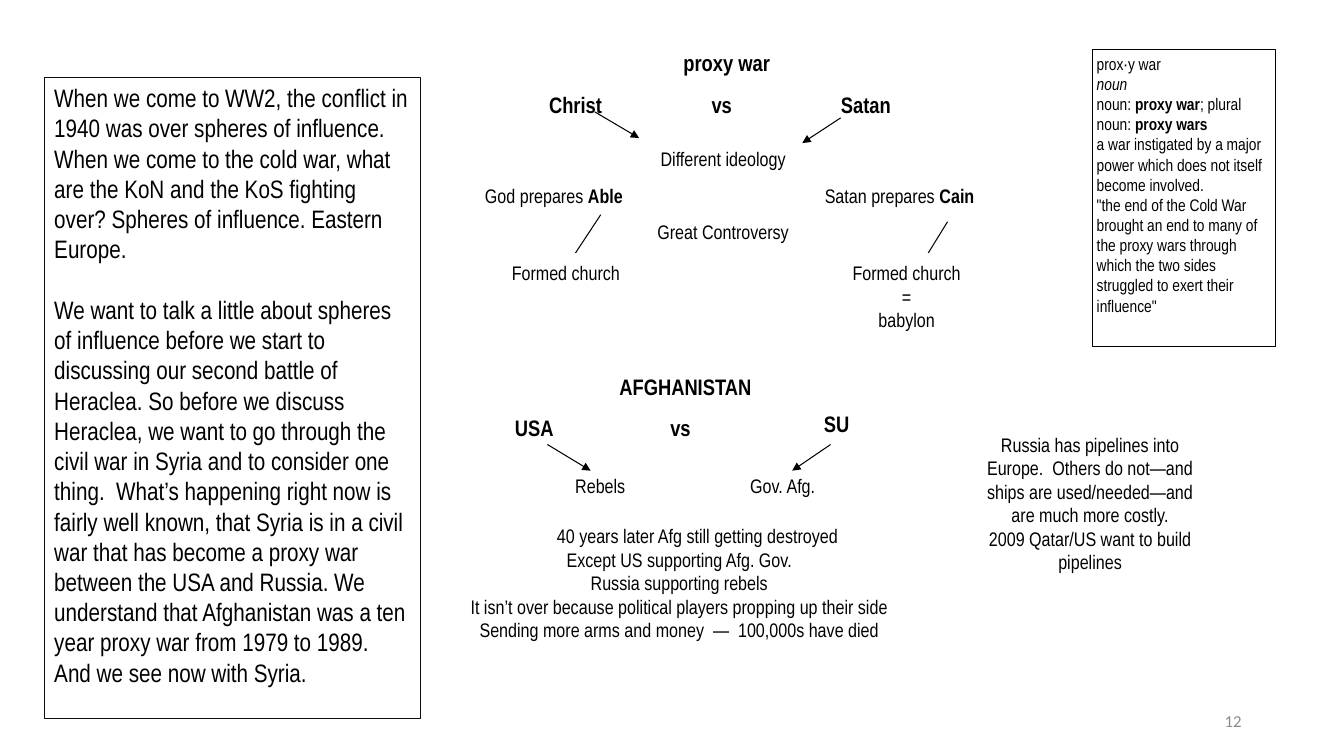
from dataclasses import dataclass

from lxml import etree
from pptx import Presentation
from pptx.dml.color import RGBColor
from pptx.enum.shapes import MSO_CONNECTOR, MSO_SHAPE
from pptx.enum.text import MSO_ANCHOR, MSO_AUTO_SIZE, PP_ALIGN
from pptx.oxml.ns import qn
from pptx.util import Pt

LEFT, CENTER, RIGHT = PP_ALIGN.LEFT, PP_ALIGN.CENTER, PP_ALIGN.RIGHT
TOP, MIDDLE = MSO_ANCHOR.TOP, MSO_ANCHOR.MIDDLE
NO_AUTOFIT = MSO_AUTO_SIZE.NONE
RECT, STRAIGHT = MSO_SHAPE.RECTANGLE, MSO_CONNECTOR.STRAIGHT


@dataclass(frozen=True)
class Theme:
    font: str = "Arial Narrow"
    number_font: str = "Calibri"
    ink: RGBColor = RGBColor(0, 0, 0)
    frame: RGBColor = RGBColor(0x0D, 0x0D, 0x0D)
    grey: RGBColor = RGBColor(0x8C, 0x8C, 0x8C)
    body: int = 18
    heading: int = 16
    label: int = 14
    small: int = 12
    inset: float = 2.88
    line: float = 0.75


T = Theme()
HEADING_W, LABEL_W, VS_W, ROW_H = 135.4, 130.3, 21.6, 26


def write(sp, paragraphs, size, align=CENTER, bold=None, inset=T.inset,
          anchor=TOP, font=T.font, color=T.ink):
    """Fill a shape; a paragraph is a string or a list of (text, style) runs."""
    tf = sp.text_frame
    tf.word_wrap = True
    tf.auto_size = NO_AUTOFIT
    tf.vertical_anchor = anchor
    tf.margin_left = tf.margin_right = Pt(inset)
    tf.margin_top = tf.margin_bottom = Pt(min(inset, 3.6))
    for i, runs in enumerate(paragraphs):
        p = tf.add_paragraph() if i else tf.paragraphs[0]
        p.alignment = align
        p.font.name, p.font.size, p.font.bold = font, Pt(size), bold
        p.font.color.rgb = color
        for text, style in [(runs, "")] if isinstance(runs, str) else runs:
            r = p.add_run()
            r.text = text
            if style == "b":
                r.font.bold = True
            elif style == "i":
                r.font.italic = True
    return tf


def add_text(slide, x, y, w, h, paragraphs, size, **style):
    sp = slide.shapes.add_textbox(Pt(x), Pt(y), Pt(w), Pt(h))
    return write(sp, paragraphs, size, **style)


def add_frame(slide, box, color, width):
    sp = slide.shapes.add_shape(RECT, *map(Pt, box))
    sp.shadow.inherit = False
    sp.fill.background()
    sp.line.color.rgb = color
    sp.line.width = Pt(width)
    return sp


def add_line(slide, x1, y1, x2, y2, arrow):
    s = slide.shapes.add_connector(STRAIGHT, Pt(x1), Pt(y1), Pt(x2), Pt(y2))
    s.line.color.rgb = T.ink
    s.line.width = Pt(T.line)
    if arrow:
        etree.SubElement(s.line._get_or_add_ln(), qn("a:tailEnd"), type="triangle")
    etree.SubElement(s._element.spPr, qn("a:effectLst"))


def add_diagram(slide, x, y, headings, labels, lines):
    """Place headings, labels and lines relative to the diagram's corner."""
    for dx, dy, text in headings:
        vs = text == "vs"
        add_text(slide, x + dx, y + dy, VS_W if vs else HEADING_W, ROW_H, [text],
                 T.heading, bold=True, align=LEFT if vs else CENTER)
    for dx, dy, paragraphs in labels:
        add_text(slide, x + dx, y + dy, LABEL_W, ROW_H + 17 * (len(paragraphs) - 1),
                 paragraphs, T.label)
    for x1, y1, x2, y2, arrow in lines:
        add_line(slide, x + x1, y + y1, x + x2, y + y2, arrow)


def spheres_panel(slide, box):
    sp = add_frame(slide, box, T.frame, T.line)
    tf = write(sp, [
        "When we come to WW2, the conflict in 1940 was over spheres of influence.  "
        "When we come to the cold war, what are the KoN and the KoS fighting over? "
        "Spheres of influence. Eastern Europe.",
        "We want to talk a little about spheres of influence before we start to "
        "discussing our second battle of Heraclea. So before we discuss Heraclea, "
        "we want to go through the civil war in Syria and to consider one thing.  "
        "What’s happening right now is fairly well known, that Syria is in a civil war "
        "that has become a proxy war between the USA and Russia. We understand that "
        "Afghanistan was a ten year proxy war from 1979 to 1989.  "
        "And we see now with Syria.",
    ], T.body, align=LEFT, inset=7.2)
    tf.paragraphs[0].space_after = Pt(21.6)


def proxy_war_diagram(slide, x, y):
    title = slide.shapes.title
    title.left, title.top = Pt(x + 121.4), Pt(y)
    title.width, title.height = Pt(HEADING_W), Pt(ROW_H)
    write(title, ["proxy war"], T.heading, bold=True)
    add_diagram(
        slide, x, y,
        headings=[(13.4, 29.5, "Christ"), (175.4, 29.5, "vs"), (220.8, 29.5, "Satan")],
        labels=[
            (121.4, 69.8, ["Different ideology"]),
            (0.5, 95.8, [[("God prepares ", ""), ("Able", "b")]]),
            (247.4, 95.8, [[("Satan prepares ", ""), ("Cain", "b")]]),
            (121.4, 121.7, ["Great Controversy"]),
            (9.1, 151.2, ["Formed church"]),
            (252.5, 151.2, ["Formed church", "=", "babylon"]),
        ],
        lines=[
            (94.8, 47.5, 126.5, 66.2, True), (270.5, 51.8, 243.1, 69.8, True),
            (99.1, 121, 81.1, 148.3, False), (346.8, 126, 333.1, 148.3, False),
        ])


def afghanistan_diagram(slide, x, y):
    add_diagram(
        slide, x, y,
        headings=[(116.9, 0, "AFGHANISTAN"), (8.9, 29.5, "USA"),
                  (170.9, 29.5, "vs"), (224.9, 26.7, "SU")],
        labels=[(58.6, 72, ["Rebels"]), (188.9, 72, ["Gov. Afg."])],
        lines=[(86, 54, 116.9, 72.7, True), (288.3, 54, 260.9, 72.7, True)])
    # Outcome of the war
    tf = add_text(slide, x + 0.3, y + 108, 360, 108, [
        "40 years later Afg still getting destroyed",
        "Except US supporting Afg. Gov.",
        "Russia supporting rebels",
        "It isn’t over because political players propping up their side",
        "Sending more arms and money  —  100,000s have died",
    ], T.label)
    tf.paragraphs[0]._p.get_or_add_pPr().set("marL", str(Pt(26)))


def definition_panel(slide, box):
    sp = add_frame(slide, box, T.ink, 0.25)
    write(sp, [
        "prox·y war",
        [("noun", "i")],
        [("noun: ", ""), ("proxy war", "b"), ("; plural noun: ", ""), ("proxy wars", "b")],
        "a war instigated by a major power which does not itself become involved.",
        '"the end of the Cold War brought an end to many of the proxy wars through '
        'which the two sides struggled to exert their influence"',
    ], T.small, align=LEFT)


def pipelines_note(slide, box):
    add_text(slide, *box, [
        "Russia has pipelines into Europe.  Others do not—and ships are "
        "used/needed—and are much more costly.",
        "2009 Qatar/US want to build pipelines",
    ], T.label)


def page_number(slide, box):
    add_text(slide, *box, ["12"], T.small, align=RIGHT, inset=7.2, anchor=MIDDLE,
             font=T.number_font, color=T.grey)


def main():
    prs = Presentation()
    prs.slide_width, prs.slide_height = Pt(960), Pt(540)
    slide = prs.slides.add_slide(prs.slide_layouts[5])
    page_number(slide, (678, 500.4, 216, 28.8))
    spheres_panel(slide, (31.7, 55.4, 268.6, 457.9))
    proxy_war_diagram(slide, 330, 32.4)
    afghanistan_diagram(slide, 305, 263.5)
    pipelines_note(slide, (695.5, 306, 166.3, 152.6))
    definition_panel(slide, (780.5, 35.3, 130.3, 211.7))
    prs.save("out.pptx")


if __name__ == "__main__":
    main()
